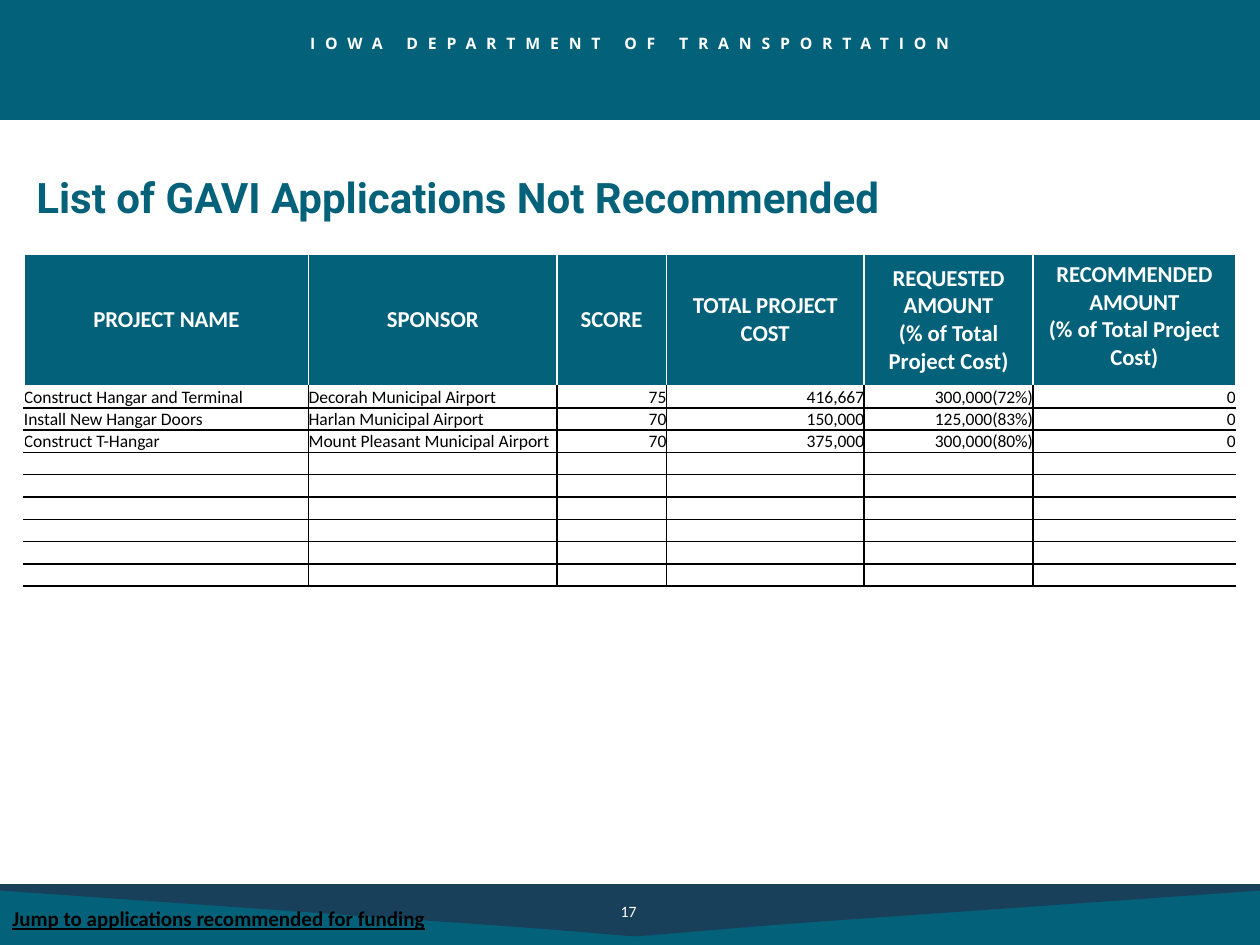
from lxml import etree
from pptx import Presentation
from pptx.dml.color import RGBColor as RGB
from pptx.enum.text import MSO_ANCHOR as ANCHOR, PP_ALIGN as ALIGN
from pptx.oxml.ns import qn
from pptx.util import Pt

COLORS = {"teal": "03617A", "navy": "19405B", "white": "FFFFFF", "black": "000000"}
C = {name: RGB.from_string(value) for name, value in COLORS.items()}


def write(tf, lines, color, align=ALIGN.LEFT, **font):
    """Fill a text frame with one paragraph per line."""
    for i, line in enumerate(lines):
        p = tf.paragraphs[0] if i == 0 else tf.add_paragraph()
        p.alignment = align
        r = p.add_run()
        r.text = line
        for key, value in font.items():
            setattr(r.font, key, value)
        r.font.color.rgb = C[color]
    return tf.paragraphs[0]


def border(cell, sides, color):
    """Add 1 pt lines to the given sides of a cell."""
    tcPr = cell._tc.get_or_add_tcPr()
    for i, side in enumerate(s for s in "LRTB" if s in sides):
        ln = etree.Element(qn(f"a:ln{side}"), w=str(Pt(1)))
        fill = etree.SubElement(ln, qn("a:solidFill"))
        etree.SubElement(fill, qn("a:srgbClr"), val=COLORS[color])
        tcPr.insert(i, ln)


prs = Presentation()
prs.slide_width, prs.slide_height = Pt(720), Pt(540)
s = prs.slides.add_slide(prs.slide_layouts[6])

# Header and footer bands
for x, y, w, h in [(0, 0, 720.5, 68.6), (-0.7, 505.3, 722, 35)]:
    sp = s.shapes.add_shape(1, Pt(x), Pt(y), Pt(w), Pt(h))
    sp.shadow.inherit = False
    sp.fill.solid()
    sp.fill.fore_color.rgb = C["teal"]
    sp.line.fill.background()

# Footer chevrons, the front one holding the page number
for x, y, w in [(0, 505.3, 720.5), (59.6, 506.2, 606.6)]:
    mid, edge, tip = x + w / 2, y + 3.6, y + 28.8
    points = [(x + w, y), (x + w, edge), (mid + 2, tip), (mid - 2, tip), (x, edge)]
    fb = s.shapes.build_freeform(Pt(x), Pt(y))
    fb.add_line_segments([(Pt(px), Pt(py)) for px, py in points])
    sp = fb.convert_to_shape()
    sp.shadow.inherit = False
    sp.fill.solid()
    sp.fill.fore_color.rgb = C["navy"]
    sp.line.fill.background()
sp.text_frame.vertical_anchor = ANCHOR.MIDDLE
p = write(sp.text_frame, ["17"], "white", name="Calibri", size=Pt(9))
p._p.get_or_add_pPr().set("marL", str(Pt(288)))

# Department name, title and jump text
texts = [
    ("IOWA DEPARTMENT OF TRANSPORTATION", (0, 15.8, 719.3, 18), "white", ALIGN.CENTER,
     ANCHOR.TOP, {"name": "Open Sans", "size": Pt(9), "bold": True}),
    ("List of GAVI Applications Not Recommended", (13.7, 100, 620.6, 28), "teal", ALIGN.LEFT,
     ANCHOR.MIDDLE, {"name": "Roboto", "size": Pt(24), "bold": True}),
    ("Jump to applications recommended for funding", (0, 514, 563.8, 21.8), "black", ALIGN.LEFT,
     ANCHOR.TOP, {"name": "Calibri", "size": Pt(12), "bold": True, "underline": True}),
]
paragraphs = []
for text, box, color, align, anchor, font in texts:
    tf = s.shapes.add_textbox(*map(Pt, box)).text_frame
    tf.word_wrap = True
    tf.vertical_anchor = anchor
    paragraphs.append(write(tf, [text], color, align, **font))
paragraphs[0].runs[0].font._element.set("spc", "560")
paragraphs[1].line_spacing = 0.9

# Applications table
HEADERS = [
    ["PROJECT NAME"], ["SPONSOR"], ["SCORE"], ["TOTAL PROJECT COST"],
    ["REQUESTED AMOUNT", "(% of Total Project Cost)"],
    ["RECOMMENDED AMOUNT", "(% of Total Project Cost)"],
]
APPLICATIONS = [
    ["Construct Hangar and Terminal", "Decorah Municipal Airport", "75", "416,667", "300,000(72%)", "0"],
    ["Install New Hangar Doors", "Harlan Municipal Airport", "70", "150,000", "125,000(83%)", "0"],
    ["Construct T-Hangar", "Mount Pleasant Municipal Airport", "70", "375,000", "300,000(80%)", "0"],
]
WIDTHS = [162.7, 141.8, 62.6, 113, 96.5, 115.9]
HEAD_H, ROW_H, N_ROWS = 75, 12.75, 9
last = len(WIDTHS) - 1

table = s.shapes.add_table(N_ROWS + 1, len(WIDTHS), Pt(13.7), Pt(145.4),
                           Pt(sum(WIDTHS)), Pt(HEAD_H + ROW_H * N_ROWS)).table
table.horz_banding = False
for col, width in zip(table.columns, WIDTHS):
    col.width = Pt(width)
for i, row in enumerate(table.rows):
    row.height = Pt(ROW_H if i else HEAD_H)

for j, lines in enumerate(HEADERS):
    cell = table.cell(0, j)
    cell.fill.solid()
    cell.fill.fore_color.rgb = C["teal"]
    cell.vertical_anchor = ANCHOR.TOP if j == last else ANCHOR.MIDDLE
    write(cell.text_frame, lines, "white", ALIGN.CENTER, name="Calibri", size=Pt(13), bold=True)
    border(cell, "LRT", "white")

for i in range(1, N_ROWS + 1):
    for j in range(len(WIDTHS)):
        cell = table.cell(i, j)
        cell.fill.background()
        cell.vertical_anchor = ANCHOR.BOTTOM
        for side in ("left", "right", "top", "bottom"):
            setattr(cell, f"margin_{side}", 0)
        if i <= len(APPLICATIONS):
            write(cell.text_frame, [APPLICATIONS[i - 1][j]], "black",
                  ALIGN.LEFT if j < 2 else ALIGN.RIGHT, name="Calibri", size=Pt(10), bold=False)
        else:
            # Keeps empty rows as low as the filled ones
            etree.SubElement(cell.text_frame.paragraphs[0]._p, qn("a:endParaRPr"), sz="1000")
        sides = "B" + ("T" if i > 1 else "") + ("L" if j else "") + ("R" if j < last else "")
        border(cell, sides, "black")

prs.save("out.pptx")
